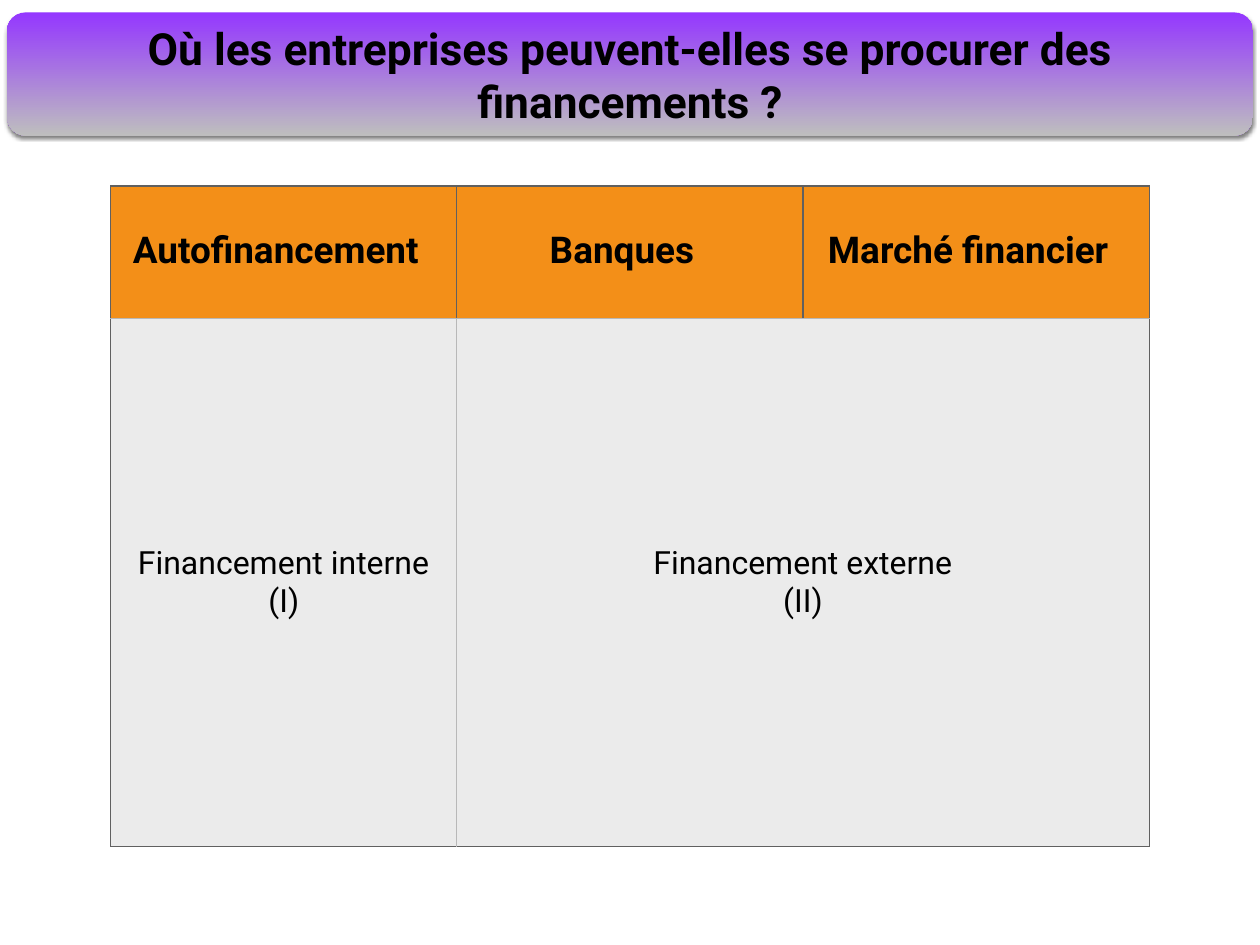
from lxml import etree
from pptx import Presentation
from pptx.dml.color import RGBColor
from pptx.enum.shapes import MSO_SHAPE
from pptx.enum.text import MSO_ANCHOR, PP_ALIGN
from pptx.oxml import parse_xml
from pptx.oxml.ns import qn
from pptx.util import Inches, Pt

ROUNDED = MSO_SHAPE.ROUNDED_RECTANGLE
MIDDLE = MSO_ANCHOR.MIDDLE
CENTER = PP_ALIGN.CENTER
TITLE_ONLY = 5
FONT = "Roboto"
PAD = 0.06
COLORS = {
    "text": "000000", "violet": "9437FF", "silver": "BEBEBE",
    "header": "F38F18", "body": "EBEBEB", "edge": "606060", "divider": "B8B8B8",
}
HEADERS = ["Autofinancement", "Banques", "Marché financier"]
BODY_ROWS = 4
SHADOW = (
    '<a:effectLst xmlns:a="http://schemas.openxmlformats.org/drawingml/2006/main">'
    '<a:outerShdw blurRad="38100" dist="25400" dir="5400000" rotWithShape="0">'
    '<a:srgbClr val="000000"><a:alpha val="50000"/></a:srgbClr>'
    '</a:outerShdw></a:effectLst>'
)


def rgb(name):
    return RGBColor.from_string(COLORS[name])


def write(tf, text, size, bold=False):
    tf.text = text
    for p in tf.paragraphs:
        p.alignment = CENTER
        p.line_spacing = 1
        p.space_before = Pt(0)
        p.font.name = FONT
        p.font.size = Pt(size)
        p.font.bold = bold
        p.font.color.rgb = rgb("text")


def set_frame(tf):
    tf.word_wrap = True
    tf.vertical_anchor = MIDDLE
    tf.margin_left = tf.margin_right = tf.margin_top = tf.margin_bottom = Inches(PAD)


def set_borders(cell, **sides):
    tc_pr = cell._tc.get_or_add_tcPr()
    for i, side in enumerate("LRTB"):
        ln = etree.Element(qn("a:ln" + side), w=str(Pt(1)))
        fill = etree.SubElement(ln, qn("a:solidFill"))
        etree.SubElement(fill, qn("a:srgbClr"), val=COLORS[sides.get(side, "edge")])
        tc_pr.insert(i, ln)


def add_banner(s, x, y, w, h):
    sp = s.shapes.add_shape(ROUNDED, Inches(x), Inches(y), Inches(w), Inches(h))
    sp.adjustments[0] = 0.15
    sp.line.fill.background()
    sp.fill.gradient()
    sp.fill.gradient_angle = 270
    for stop, name in zip(sp.fill.gradient_stops, ("violet", "silver")):
        stop.color.rgb = rgb(name)
        stop.position = 0 if name == "violet" else 1
    sp._element.spPr.append(parse_xml(SHADOW))

    title = s.shapes.title
    inset = w * 0.055
    title.left, title.top = Inches(x + inset), Inches(y + 0.04)
    title.width, title.height = Inches(w - 2 * inset), Inches(h - 0.08)
    set_frame(title.text_frame)
    write(title.text_frame, "Où les entreprises peuvent-elles se procurer des financements ?", 36, True)
    title._element.addprevious(sp._element)


def add_funding_table(s, x, y, w, h):
    n_rows, n_cols = BODY_ROWS + 1, len(HEADERS)
    col_w, row_h = w / n_cols, h / n_rows
    frame = s.shapes.add_table(n_rows, n_cols, Inches(x), Inches(y), Inches(w), Inches(h))
    table = frame.table
    for row in range(n_rows):
        for col in range(n_cols):
            cell = table.cell(row, col)
            cell.fill.solid()
            cell.fill.fore_color.rgb = rgb("body" if row else "header")
            if not row:
                set_borders(cell, B="divider")
            elif col:
                set_borders(cell, L="divider", T="divider")
            else:
                set_borders(cell, R="divider", T="divider")

    spans = [(0, 0, "Financement interne\n(I)"), (1, n_cols - 1, "Financement externe\n(II)")]
    for first, last, text in spans:
        cell = table.cell(1, first)
        cell.merge(table.cell(BODY_ROWS, last))
        cell.vertical_anchor = MIDDLE
        cell.margin_left = cell.margin_right = Inches(PAD)
        cell.margin_top = cell.margin_bottom = Inches(PAD)
        write(cell.text_frame, text, 26)

    label_h = 0.61
    label_y = y + (row_h - label_h) / 2 - 0.04
    for col, text in enumerate(HEADERS):
        box = s.shapes.add_textbox(Inches(x + col * col_w - 0.09), Inches(label_y),
                                   Inches(col_w), Inches(label_h))
        set_frame(box.text_frame)
        write(box.text_frame, text, 30, True)


def main():
    prs = Presentation()
    prs.slide_width, prs.slide_height = Inches(14.22), Inches(10.67)
    s = prs.slides.add_slide(prs.slide_layouts[TITLE_ONLY])
    add_banner(s, 0.08, 0.14, 14.06, 1.39)
    add_funding_table(s, 1.25, 2.1, 11.72, 7.46)
    prs.save("out.pptx")


if __name__ == "__main__":
    main()
